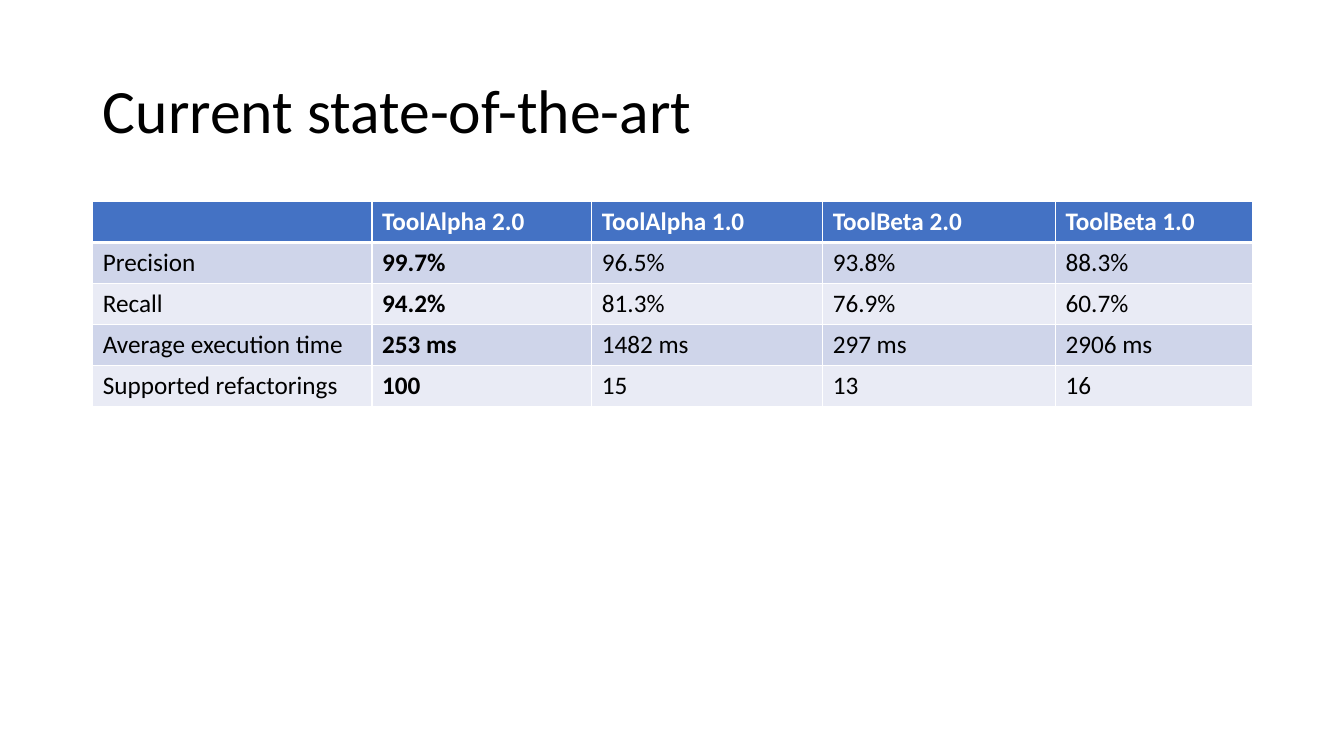
from lxml import etree
from pptx import Presentation
from pptx.dml.color import RGBColor
from pptx.enum.text import MSO_ANCHOR, PP_ALIGN
from pptx.oxml.ns import qn
from pptx.util import Inches, Pt

LEFT = PP_ALIGN.LEFT
MIDDLE = MSO_ANCHOR.MIDDLE
BLACK = RGBColor(0x00, 0x00, 0x00)
WHITE = RGBColor(0xFF, 0xFF, 0xFF)
BLUE = RGBColor(0x44, 0x72, 0xC4)
BANDS = [RGBColor(0xE9, 0xEB, 0xF5), RGBColor(0xCF, 0xD5, 0xEA)]
FONT = "Calibri"

ROWS = [
    ["", "ToolAlpha 2.0", "ToolAlpha 1.0", "ToolBeta 2.0", "ToolBeta 1.0"],
    ["Precision", "99.7%", "96.5%", "93.8%", "88.3%"],
    ["Recall", "94.2%", "81.3%", "76.9%", "60.7%"],
    ["Average execution time", "253 ms", "1482 ms", "297 ms", "2906 ms"],
    ["Supported refactorings", "100", "15", "13", "16"],
]
WIDTHS = [2.77, 2.18, 2.29, 2.31, 1.95]
SPAN = 11.5
EDGE = 0.92
HIGH = 2.03


def style(para, size, color, bold):
    font = para.font
    font.name = FONT
    font.size = Pt(size)
    font.color.rgb = color
    font.bold = bold


def border(cell, side, width):
    props = cell._tc.get_or_add_tcPr()
    line = etree.SubElement(props, qn("a:" + side), w=str(Pt(width)))
    fill = etree.SubElement(line, qn("a:solidFill"))
    etree.SubElement(fill, qn("a:srgbClr"), val=str(WHITE))


deck = Presentation()
deck.slide_width = Inches(13.33)
deck.slide_height = Inches(7.5)
slide = deck.slides.add_slide(deck.slide_layouts[5])

title = slide.shapes.title
title.left, title.top = Inches(EDGE), Inches(0.4)
title.width, title.height = Inches(SPAN), Inches(1.45)
title.text_frame.text = "Current state-of-the-art"
title.text_frame.vertical_anchor = MIDDLE
head = title.text_frame.paragraphs[0]
head.alignment = LEFT
head.line_spacing = 0.9
style(head, 44, BLACK, False)

table = slide.shapes.add_table(
    len(ROWS), len(WIDTHS), Inches(EDGE), Inches(2),
    Inches(SPAN), Inches(HIGH)).table
for col, width in zip(table.columns, WIDTHS):
    col.width = Inches(width)

for r, row in enumerate(ROWS):
    for c, text in enumerate(row):
        cell = table.cell(r, c)
        cell.text = text
        style(cell.text_frame.paragraphs[0], 18,
              BLACK if r else WHITE, r == 0 or c == 1)
        for side in ("lnL", "lnR", "lnT", "lnB"):
            thick = (r, side) in ((0, "lnB"), (1, "lnT"))
            border(cell, side, 3 if thick else 1)
        cell.fill.solid()
        cell.fill.fore_color.rgb = BANDS[r % 2] if r else BLUE

deck.save("out.pptx")
